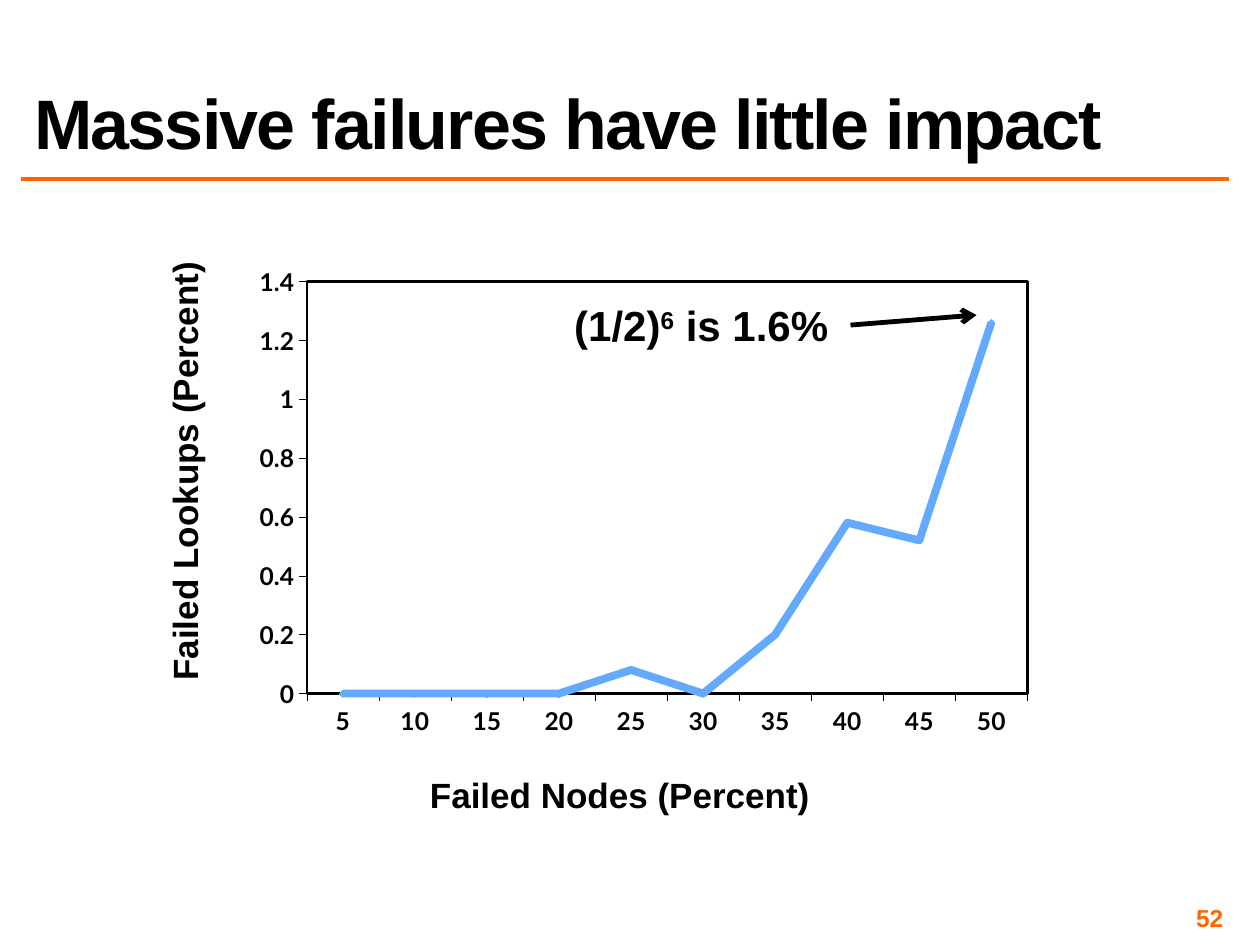
from lxml import etree
from pptx import Presentation
from pptx import util as u
from pptx.chart.data import CategoryChartData
from pptx.dml.color import RGBColor
from pptx.enum import chart as charts, shapes, text
from pptx.oxml import parse_xml
from pptx.oxml.ns import nsdecls, qn

# Content
TITLE = "Massive failures have little impact"
PAGE_NUMBER = "52"
FAILED_NODES = [str(percent) for percent in range(5, 55, 5)]
FAILED_LOOKUPS = [0, 0, 0, 0, 0.08, 0, 0.2, 0.58, 0.52, 1.26]
# Each label: box (left, top, width, height), rotation, size, runs (text, baseline)
LABELS = [
    ((-0.31, 3.52, 3.55, 0.44), 270, 20, [("Failed Lookups (Percent)", None)]),
    ((3.3, 6.09, 3.24, 0.44), 0, 20, [("Failed Nodes (Percent)", None)]),
    ((4.44, 2.33, 2.25, 0.5), 0, 24,
     [("(1/2)", None), ("6", 30000), (" is 1.6%", None)]),
]
COLORS = {"ink": "000000", "accent": "FF6600", "series": "63AAFE"}
PLOT = {"x": 0.109, "y": 0.086, "w": 0.872, "h": 0.754}  # shares of the chart
LEFT, WIDTH = 0.17, 9.58


def color(name):
    return RGBColor.from_string(COLORS[name])


def style_font(font, size, name="ink", face="Arial"):
    font.name, font.size, font.bold = face, u.Pt(size), True
    font.color.rgb = color(name)


def add_line(page, start, end, name, width):
    line = page.shapes.add_connector(
        shapes.MSO_CONNECTOR.STRAIGHT, *map(u.Inches, start + end))
    line.line.color.rgb = color(name)
    line.line.width = u.Pt(width)
    etree.SubElement(line._element.spPr, qn("a:effectLst"))
    return line


def add_text(page, place, size, runs, name="ink", align=text.PP_ALIGN.CENTER):
    box = page.shapes.add_textbox(*map(u.Inches, place))
    para = box.text_frame.paragraphs[0]
    para.alignment = align
    for words, baseline in runs:
        span = para.add_run()
        span.text = words
        style_font(span.font, size, name)
        if baseline:
            span.font._element.set("baseline", str(baseline))
    return box


def add_title(page):
    title = page.shapes.title
    title.left, title.top, title.width, title.height = map(
        u.Inches, (LEFT, 0.17, WIDTH, 1.17))
    frame = title.text_frame
    frame.vertical_anchor = text.MSO_ANCHOR.BOTTOM
    frame.auto_size = text.MSO_AUTO_SIZE.NONE
    para = frame.paragraphs[0]
    para.alignment, para.line_spacing = text.PP_ALIGN.LEFT, 0.8
    span = para.add_run()
    span.text = TITLE
    style_font(span.font, 40)
    span.font._element.set("spc", "-100")


def add_failure_chart(page):
    data = CategoryChartData()
    data.categories = FAILED_NODES
    data.add_series("Failed lookups", FAILED_LOOKUPS)
    chart = page.shapes.add_chart(
        charts.XL_CHART_TYPE.LINE_MARKERS,
        *map(u.Inches, (1.72, 1.86, 6.56, 4.34)), data).chart
    chart.has_legend = chart.has_title = False
    style_font(chart.font, 14, face="Lato")

    # Axes
    for axis in (chart.category_axis, chart.value_axis):
        axis.has_major_gridlines = False
        axis.major_tick_mark = charts.XL_TICK_MARK.OUTSIDE
        axis.format.line.color.rgb = color("ink")
        axis.format.line.width = u.Pt(0.25)
        style_font(axis.tick_labels.font, 14, face="Lato")
    scale = chart.value_axis
    scale.minimum_scale, scale.maximum_scale, scale.major_unit = 0, 1.4, 0.2
    scale.tick_labels.number_format = "General"
    scale.tick_labels.number_format_is_linked = False

    # Series
    chart.plots[0].vary_by_categories = False
    series = chart.plots[0].series[0]
    series.smooth = False
    series.format.line.color.rgb = color("series")
    series.format.line.width = u.Pt(4.5)
    marker = series.marker
    marker.style, marker.size = charts.XL_MARKER_STYLE.DIAMOND, 4
    marker.format.fill.solid()
    marker.format.fill.fore_color.rgb = color("series")
    marker.format.line.color.rgb = color("series")

    # Plot area: inner position and black frame
    area = chart._chartSpace.chart.plotArea
    for old in area.findall(qn("c:layout")):
        area.remove(old)
    shares = "".join(f'<c:{key} val="{share}"/>' for key, share in PLOT.items())
    area.insert(0, parse_xml(
        f'<c:layout {nsdecls("c")}><c:manualLayout><c:layoutTarget val="inner"/>'
        f'<c:xMode val="edge"/><c:yMode val="edge"/>{shares}'
        '</c:manualLayout></c:layout>'))
    area.append(parse_xml(
        f'<c:spPr {nsdecls("c", "a")}><a:noFill/><a:ln w="{u.Pt(1.5)}"><a:solidFill>'
        f'<a:srgbClr val="{COLORS["ink"]}"/></a:solidFill></a:ln></c:spPr>'))


def main():
    deck = Presentation()
    deck.slide_width, deck.slide_height = u.Inches(10), u.Inches(7.5)
    page = deck.slides.add_slide(deck.slide_layouts[5])

    # Heading, rule and page number
    add_title(page)
    add_line(page, (LEFT, 1.42), (LEFT + WIDTH, 1.42), "accent", 2)
    number = add_text(page, (7.42, 7.17, 2.33, 0.23), 14, [(PAGE_NUMBER, None)],
                      "accent", text.PP_ALIGN.RIGHT).text_frame
    number.word_wrap = True
    number.vertical_anchor = text.MSO_ANCHOR.MIDDLE
    number.margin_left = number.margin_right = u.Inches(0.04)
    number.margin_top = number.margin_bottom = u.Inches(0.04)

    # Chart with its labels
    add_failure_chart(page)
    for place, rotation, size, runs in LABELS:
        label = add_text(page, place, size, runs)
        label.rotation = rotation
        label.text_frame.word_wrap = False
        label.text_frame.auto_size = text.MSO_AUTO_SIZE.SHAPE_TO_FIT_TEXT

    # Arrow from the note to the last point
    arrow = add_line(page, (6.75, 2.58), (7.75, 2.5), "ink", 2.75)
    etree.SubElement(arrow.line._get_or_add_ln(), qn("a:tailEnd"), type="arrow")

    deck.save("out.pptx")


if __name__ == "__main__":
    main()
